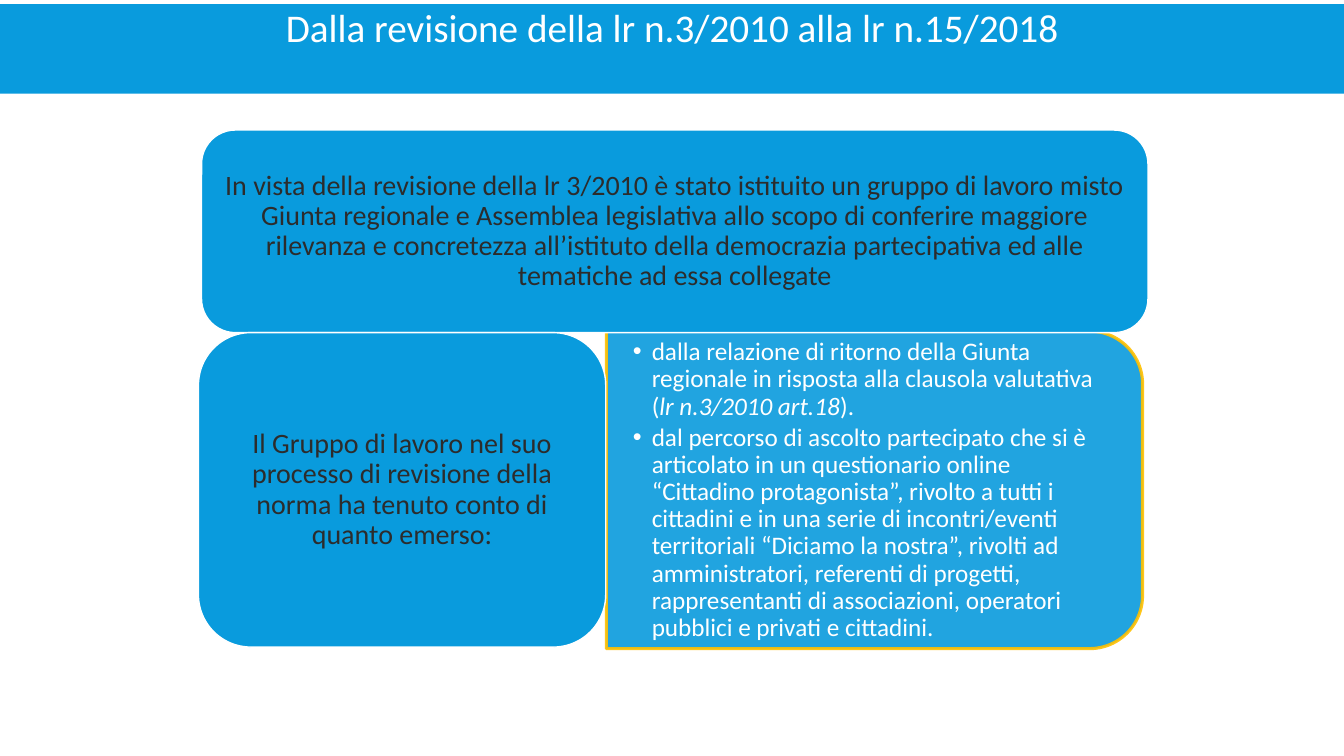
from lxml.etree import SubElement
from pptx import Presentation
from pptx.dml.color import RGBColor
from pptx.enum.shapes import MSO_SHAPE
from pptx.enum.text import MSO_ANCHOR, PP_ALIGN
from pptx.oxml.ns import qn
from pptx.util import Pt

COLORS = {"blue": "099BDD", "gold": "FFC000", "dark": "2C2C2C", "white": "FFFFFF"}


def add_block(kind, left, top, width, height, line=None, line_width=1):
    block = slide.shapes.add_shape(kind, Pt(left), Pt(top), Pt(width), Pt(height))
    block.shadow.inherit = False
    block.fill.solid()
    block.fill.fore_color.rgb = RGBColor.from_string(COLORS["blue"])
    if line:
        block.line.color.rgb = RGBColor.from_string(COLORS[line])
        block.line.width = Pt(line_width)
    else:
        block.line.fill.background()
    return block


def write_runs(paragraph, runs, size, color, align):
    paragraph.alignment = align
    paragraph.line_spacing = 0.9
    for text, italic in runs:
        run = paragraph.add_run()
        run.text = text
        run.font.name = "Calibri"
        run.font.size = Pt(size)
        run.font.italic = italic
        run.font.color.rgb = RGBColor.from_string(COLORS[color])


prs = Presentation()
prs.slide_width, prs.slide_height = Pt(960), Pt(540)
slide = prs.slides.add_slide(prs.slide_layouts[6])

statements = [
    (144, 92.9, 676, 144.7,
     "In vista della revisione della lr 3/2010 è stato istituito un gruppo di lavoro misto "
     "Giunta regionale e Assemblea legislativa allo scopo di conferire maggiore rilevanza e "
     "concretezza all’istituto della democrazia partecipativa ed alle tematiche ad essa collegate"),
    (141.8, 237.6, 290.9, 224.6,
     "Il Gruppo di lavoro nel suo processo di revisione della norma ha tenuto conto di "
     "quanto emerso:"),
]
sources = [
    [("dalla relazione di ritorno della Giunta regionale in risposta alla clausola valutativa (", False),
     ("lr n.3/2010 art.18", True),
     (").", False)],
    [("dal percorso di ascolto partecipato che si è articolato in un questionario online "
      "“Cittadino protagonista”, rivolto a tutti i cittadini e in una serie di incontri/eventi "
      "territoriali “Diciamo la nostra”, rivolti ad amministratori, referenti di progetti, "
      "rappresentanti di associazioni, operatori pubblici e privati e cittadini.", False)],
]

sources_panel = add_block(MSO_SHAPE.ROUND_2_SAME_RECTANGLE, 511.2, 158.4, 226.8, 383, "gold", 2.25)
sources_panel.rotation = 90
for color in sources_panel.element.spPr.iter(qn("a:srgbClr")):
    SubElement(color, qn("a:alpha"), val="90000")

sources_text = slide.shapes.add_textbox(Pt(432.7), Pt(247.7), Pt(372.2), Pt(205.2)).text_frame
sources_text.word_wrap = True
sources_text.vertical_anchor = MSO_ANCHOR.MIDDLE
sources_text.margin_left = sources_text.margin_right = Pt(19.4)
sources_text.margin_top = sources_text.margin_bottom = Pt(10)
for index, runs in enumerate(sources):
    item = sources_text.add_paragraph() if index else sources_text.paragraphs[0]
    write_runs(item, runs, 18, "white", PP_ALIGN.LEFT)
    item.space_after = Pt(2.7)
    properties = item._p.get_or_add_pPr()
    properties.set("marL", str(Pt(13.5)))
    properties.set("indent", str(Pt(-13.5)))
    SubElement(properties, qn("a:buFont"), typeface="Arial")
    SubElement(properties, qn("a:buChar"), char="•")

for left, top, width, height, statement in statements:
    frame = add_block(MSO_SHAPE.ROUNDED_RECTANGLE, left, top, width, height, "white").text_frame
    frame.word_wrap = True
    frame.vertical_anchor = MSO_ANCHOR.MIDDLE
    frame.margin_left = frame.margin_right = Pt(6)
    frame.margin_top = frame.margin_bottom = Pt(3)
    write_runs(frame.paragraphs[0], [(statement, False)], 20, "dark", PP_ALIGN.CENTER)

heading = add_block(MSO_SHAPE.RECTANGLE, 0, 2.9, 960, 64).text_frame
heading.word_wrap = True
heading.vertical_anchor = MSO_ANCHOR.TOP
write_runs(heading.paragraphs[0], [("Dalla revisione della lr n.3/2010 alla lr n.15/2018", False)],
           28, "white", PP_ALIGN.CENTER)

prs.save("out.pptx")
